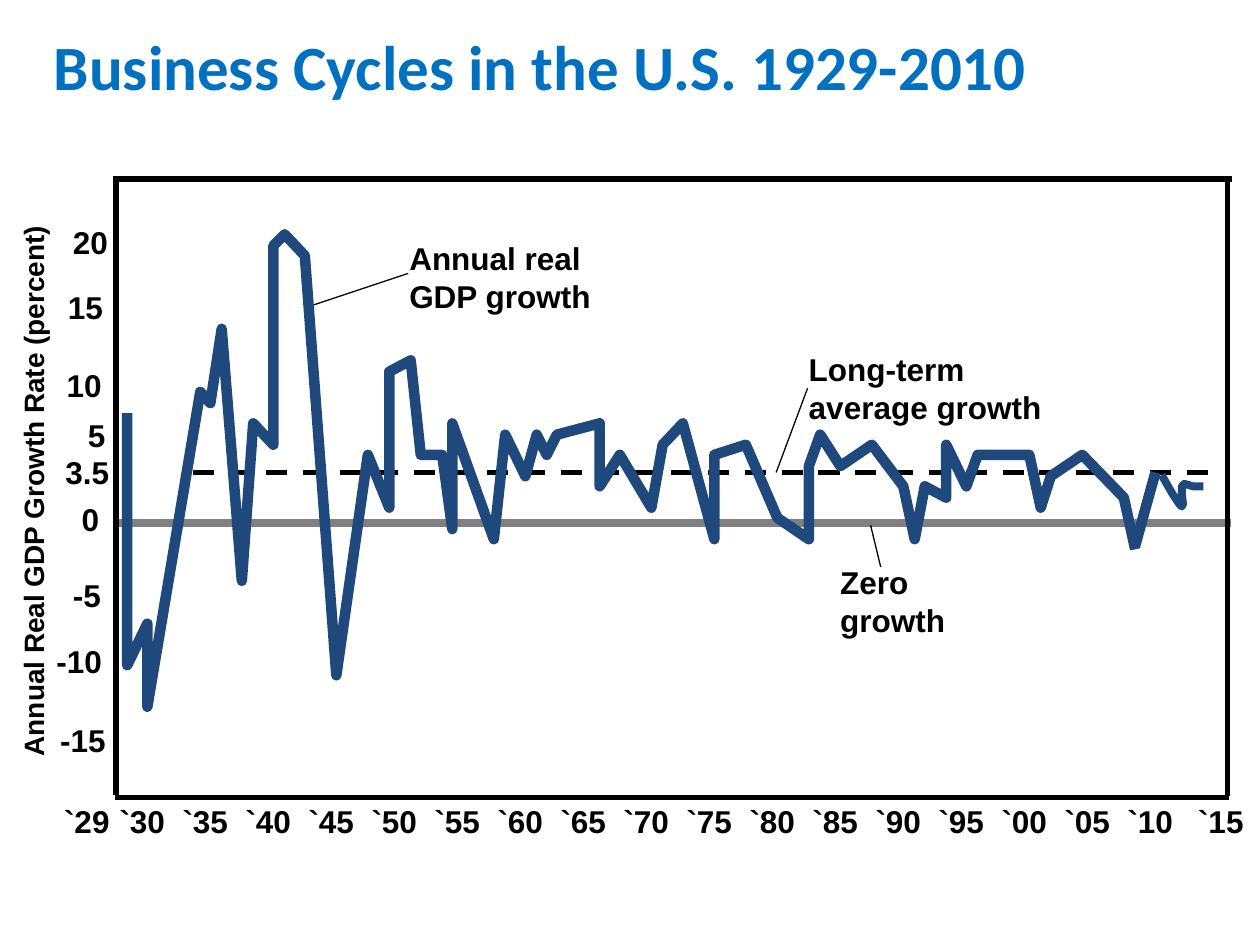
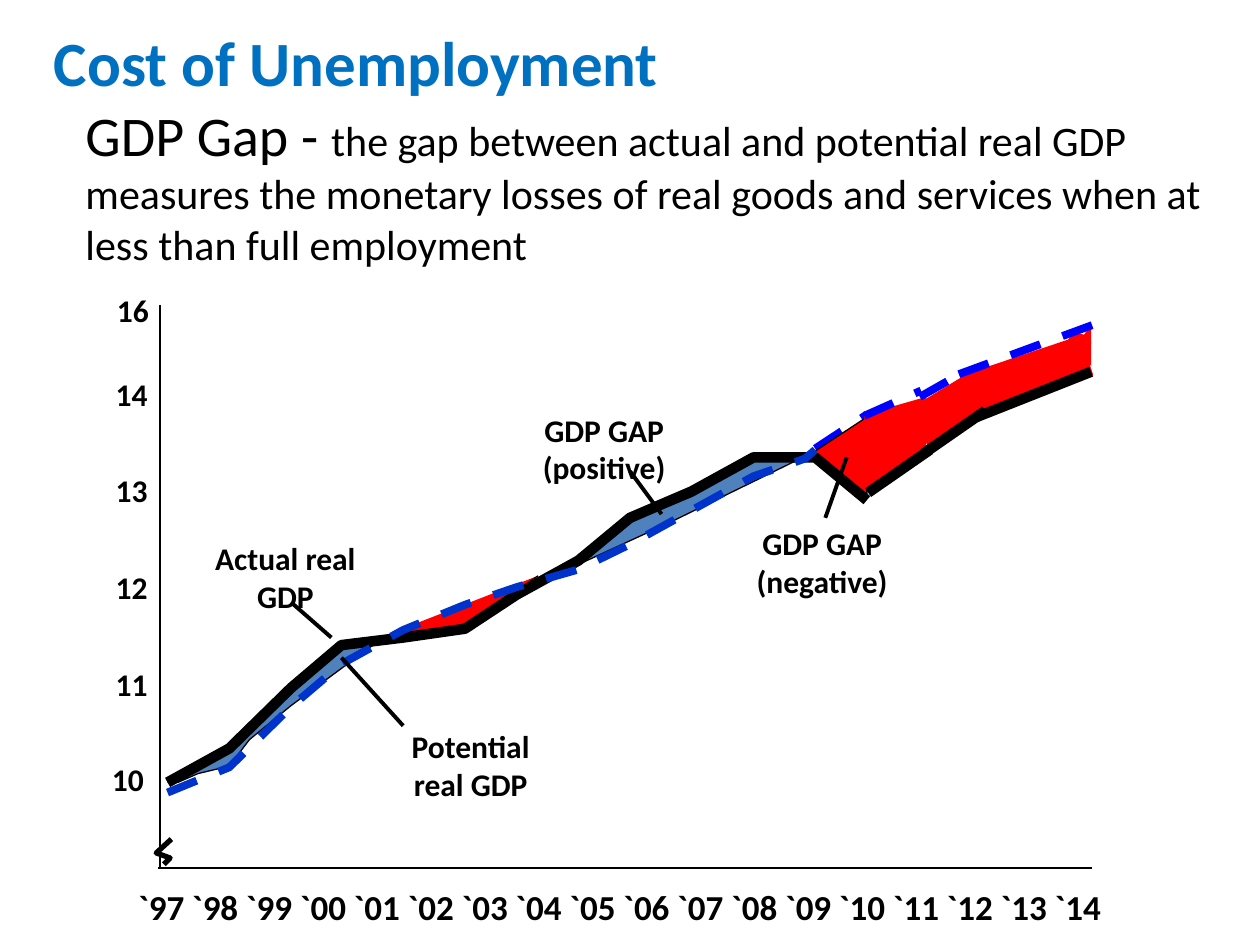
import lxml.etree
import pptx
import pptx.dml.color
import pptx.enum.dml
import pptx.enum.shapes
import pptx.enum.text
import pptx.oxml.ns
import pptx.util

RGBColor = pptx.dml.color.RGBColor
BLACK = RGBColor(0x00, 0x00, 0x00)
GRAY = RGBColor(0x80, 0x80, 0x80)
TITLE_BLUE = RGBColor(0x00, 0x70, 0xC0)
GROWTH_NAVY = RGBColor(0x1F, 0x49, 0x7D)
GAIN_BLUE = RGBColor(0x4F, 0x81, 0xBD)
LOSS_RED = RGBColor(0xFF, 0x00, 0x00)
POTENTIAL_BLUE = RGBColor(0x00, 0x33, 0xCC)
FORECAST_BLUE = RGBColor(0x00, 0x00, 0xFF)

EMU_PER_PX = 9144  # 100 px to the inch
SHAPE = pptx.enum.shapes.MSO_SHAPE
ALIGN = pptx.enum.text.PP_ALIGN
ANCHOR = pptx.enum.text.MSO_ANCHOR


def px(length):
    return pptx.util.Emu(length * EMU_PER_PX)


class Page:
    """One slide, with the label font used on it."""

    def __init__(self, deck, font):
        self.slide = deck.slides.add_slide(deck.slide_layouts[6])
        self.shapes = self.slide.shapes
        self.font = font

    # Text
    def text(self, runs, left, top, width, height, align=ALIGN.LEFT, color=BLACK,
             font=None, bold=True, anchor=ANCHOR.TOP, spacing=None, rotation=0):
        """Runs are (text, size) pairs."""
        box = self.shapes.add_textbox(px(left), px(top), px(width), px(height))
        box.rotation = rotation
        frame = box.text_frame
        frame.word_wrap = True
        frame.vertical_anchor = anchor
        para = frame.paragraphs[0]
        para.alignment = align
        para.line_spacing = spacing
        for words, size in runs:
            span = para.add_run()
            span.text = words
            span.font.name = font or self.font
            span.font.size = pptx.util.Pt(size)
            span.font.bold = bold
            span.font.color.rgb = color
        return para

    def title(self, words, top, height, **style):
        self.text([(words, 36)], 33, top, 940, height, color=TITLE_BLUE,
                  font="Calibri", **style)

    def label(self, words, left, top, width, height=40, align=ALIGN.LEFT):
        self.text([(words, 18)], left, top, width, height, align)

    def tabbed(self, words, size, stops, left, top, width, height):
        para = self.text([("\t".join(words), size)], left, top, width, height)
        qn = pptx.oxml.ns.qn
        tab_list = lxml.etree.SubElement(para._p.get_or_add_pPr(), qn("a:tabLst"))
        for stop in stops:
            lxml.etree.SubElement(tab_list, qn("a:tab"), pos=str(px(stop)), algn="l")

    # Lines and outlines
    def pen(self, line, color, weight, dashed):
        line.color.rgb = color
        line.width = pptx.util.Pt(weight)
        if dashed:
            line.dash_style = pptx.enum.dml.MSO_LINE.DASH

    def line(self, start, end, color=BLACK, weight=0.75, dashed=False):
        connector = self.shapes.add_connector(
            pptx.enum.shapes.MSO_CONNECTOR.STRAIGHT, *map(px, start + end))
        self.pen(connector.line, color, weight, dashed)
        lxml.etree.SubElement(connector._element.spPr, pptx.oxml.ns.qn("a:effectLst"))

    def outline(self, points, fill=None, color=BLACK, weight=0.75, dashed=False,
                closed=False):
        builder = self.shapes.build_freeform(*points[0], scale=EMU_PER_PX)
        builder.add_line_segments(points[1:], close=closed)
        self.finish(builder.convert_to_shape(), fill, color, weight, dashed)

    def patch(self, kind, left, top, width, height, rotation=0):
        shape = self.shapes.add_shape(kind, px(left), px(top), px(width), px(height))
        shape.rotation = rotation
        self.finish(shape, LOSS_RED)

    def finish(self, shape, fill, color=None, weight=0, dashed=False):
        shape.shadow.inherit = False
        if fill is None:
            shape.fill.background()
        else:
            shape.fill.solid()
            shape.fill.fore_color.rgb = fill
        if color is None:
            shape.line.fill.background()
        else:
            self.pen(shape.line, color, weight, dashed)


GROWTH = [
    (101, 328), (101, 528), (117, 495), (117, 561), (159, 311), (167, 320),
    (176, 261), (192, 461), (201, 336), (217, 353), (217, 195), (226, 186),
    (242, 203), (267, 536), (292, 361), (309, 403), (309, 295), (326, 286),
    (334, 361), (351, 361), (359, 420), (359, 336), (392, 428), (401, 345),
    (417, 378), (426, 345), (434, 361), (442, 345), (476, 336), (476, 386),
    (492, 361), (517, 403), (526, 353), (542, 336), (567, 428), (567, 361),
    (592, 353), (617, 411), (642, 428), (642, 370), (651, 345), (667, 370),
    (692, 353), (717, 386), (726, 428), (734, 386), (751, 395), (751, 353),
    (767, 386), (776, 361), (817, 361), (826, 403), (834, 378), (859, 361),
    (892, 395), (901, 436)]
RECENT_GROWTH = [(922, 377), (930, 391), (936, 400), (938, 402), (939, 400),
                 (938, 392), (938, 386), (940, 384), (947, 386), (955, 386)]


def business_cycles(deck):
    page = Page(deck, "Arial")
    page.title("Business Cycles in the U.S. 1929-2010", 17, 65)

    # Axes
    page.text([("Annual Real GDP Growth Rate (percent)", 16)], -216, 349, 485, 37,
              rotation=270)
    page.line((91, 415), (977, 415), GRAY, 4.5)
    page.line((153, 375), (969, 375), BLACK, 3, dashed=True)
    years = ["`29"] + [f"`{year % 100:02}" for year in range(1930, 2016, 5)]
    stops = [44 + 50 * step for step in range(17)] + [900]
    page.tabbed(years, 18, stops, 41, 632, 958, 40)
    for rate, left, top in [("20", 48, 172), ("15", 44, 224), ("10", 43, 286),
                            ("5", 60, 325), ("3.5", 42, 355), ("0", 55, 392),
                            ("-5", 48, 452), ("-10", 35, 505), ("-15", 38, 567)]:
        page.label(rate, left, top, 67)

    # Callouts
    for words, left, top, width, start, end in [
            ("Annual real GDP growth", 315, 185, 175, (324, 217), (249, 242)),
            ("Long-term average growth", 632, 273, 208, (641, 308), (616, 375)),
            ("Zero growth", 657, 442, 108, (699, 450), (691, 417))]:
        page.label(words, left, top, width, 70)
        page.line(start, end)

    # Growth curve and frame
    page.outline(GROWTH, color=GROWTH_NAVY, weight=6)
    for start, end in [((91, 142), (978, 142)), ((91, 633), (975, 633)),
                       ((92, 140), (92, 631)), ((974, 141), (974, 632))]:
        page.line(start, end, weight=3)
    page.line((901, 433), (917, 375), GROWTH_NAVY, 6)
    page.outline(RECENT_GROWTH, color=GROWTH_NAVY, weight=4.5)


ACTUAL = [(133, 621), (182, 594), (231, 546), (271, 512), (320, 506), (369, 499),
          (410, 472), (459, 445), (500, 411), (549, 390), (598, 363), (647, 363),
          (688, 397)]
POTENTIAL = [(133, 629), (182, 609), (231, 561), (271, 527), (320, 500), (369, 480),
             (410, 466), (459, 452), (500, 432), (549, 405), (598, 378), (639, 364),
             (647, 357)]
LOSS_2002 = [(304, 505), (369, 497), (427, 457)]
LOSS_2009 = [(647, 358), (688, 331), (688, 392)]
LOSS_2010 = [(686, 329), (735, 315), (735, 363), (686, 390)]
GAIN_2006 = [(459, 448), (500, 414), (549, 394), (598, 366), (631, 366), (533, 414)]
GAIN_1999 = [(141, 621), (182, 594), (271, 512), (296, 512), (231, 560), (198, 587),
             (182, 608), (157, 614)]
AXIS_BREAK = [(136, 666), (124, 677), (135, 681), (130, 686)]


def cost_of_unemployment(deck):
    page = Page(deck, "Calibri")
    page.title("Cost of Unemployment", 24, 60, anchor=ANCHOR.MIDDLE, spacing=0.8)
    page.text([("GDP Gap - ", 32),
               ("the gap between actual and potential real GDP measures the monetary "
                "losses of real goods and services when at less than full employment",
                24)], 58, 75, 925, 186, bold=False)

    # Axes
    page.line((127, 242), (127, 689))
    page.line((125, 689), (867, 689))
    years = " ".join(f"`{year % 100:02}" for year in range(1997, 2015))
    page.text([(years, 20)], 100, 698, 786, 44)
    for level, left, top in [("16", 83, 226), ("14", 82, 293), ("13", 82, 369),
                             ("12", 82, 446), ("11", 82, 523), ("10", 79, 598)]:
        page.label(level, left, top, 106)
    page.outline(AXIS_BREAK, weight=3)

    # Curve labels
    for words, left, top, width in [("GDP GAP (positive)", 402, 321, 155),
                                    ("Actual real GDP", 157, 423, 139),
                                    ("Potential real GDP", 304, 572, 139),
                                    ("GDP GAP (negative)", 575, 411, 155)]:
        page.label(words, left, top, width, 57, ALIGN.CENTER)

    # Gaps between the curves, with their pointers
    page.line((133, 621), (149, 614))
    page.line((647, 356), (688, 329), FORECAST_BLUE, 4.5, dashed=True)
    for loss in (LOSS_2002, LOSS_2009):
        page.outline(loss, LOSS_RED)
    for gain in (GAIN_2006, GAIN_1999):
        page.outline(gain, GAIN_BLUE, closed=True)

    # Actual and potential GDP
    page.outline(ACTUAL, weight=6)
    page.outline(POTENTIAL, color=POTENTIAL_BLUE, weight=4.5, dashed=True)
    page.outline(LOSS_2010, LOSS_RED, color=None, closed=True)
    for start, end in [((231, 478), (263, 506)), ((271, 522), (320, 576)),
                       ((672, 363), (655, 411)), ((525, 408), (500, 374))]:
        page.line(start, end, weight=2.25)

    # Years after 2010
    page.line((686, 330), (731, 310), FORECAST_BLUE, 4.5, dashed=True)
    page.line((689, 391), (738, 357), weight=6)
    page.patch(SHAPE.RECTANGLE, 724, 309, 56, 33, 328.7)
    page.patch(SHAPE.RECTANGLE, 768, 281, 97, 33, 341.4)
    page.line((733, 360), (782, 326), weight=6)
    page.line((775, 331), (866, 295), weight=6)
    page.patch(SHAPE.RIGHT_TRIANGLE, 838, 262, 32, 24, 270)
    page.patch(SHAPE.OVAL, 847, 265, 19, 15)
    page.line((730, 315), (767, 294), FORECAST_BLUE, 4.5, dashed=True)
    page.line((761, 297), (867, 258), FORECAST_BLUE, 4.5, dashed=True)


def main():
    deck = pptx.Presentation()
    deck.slide_width, deck.slide_height = px(1000), px(750)
    business_cycles(deck)
    cost_of_unemployment(deck)
    deck.save("out.pptx")


if __name__ == "__main__":
    main()
